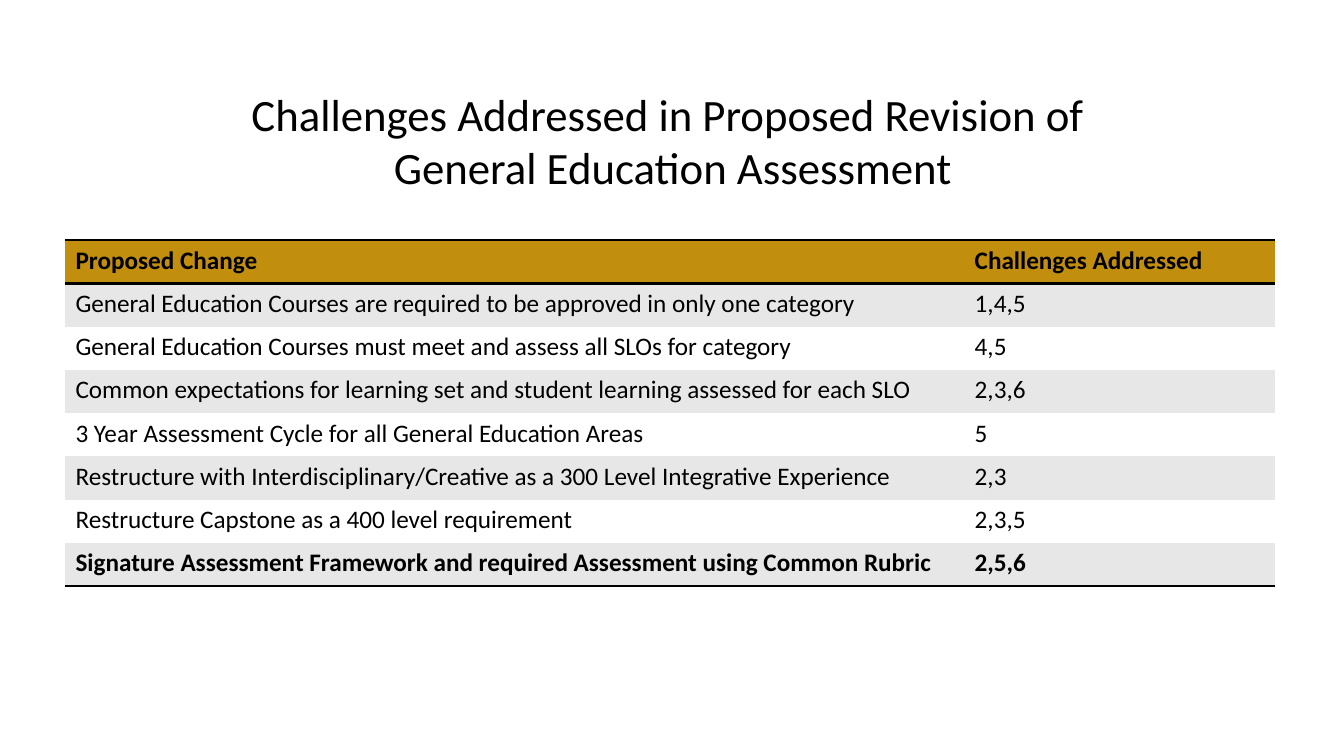
from lxml import etree
from pptx import Presentation
from pptx.dml.color import RGBColor
from pptx.enum.text import MSO_ANCHOR, MSO_AUTO_SIZE, PP_ALIGN
from pptx.oxml.ns import qn
from pptx.util import Cm, Pt

CENTER = PP_ALIGN.CENTER
MIDDLE = MSO_ANCHOR.MIDDLE
NO_AUTOFIT = MSO_AUTO_SIZE.NONE
TITLE_ONLY = 5
NO_STYLE = "{2D5ABB26-0587-4C30-8999-92F81FD0307C}"
FONT = "Calibri"
COLORS = {"text": "000000", "header": "C28E0E", "band": "E7E7E7", "plain": "FFFFFF"}

TITLE = ["Challenges Addressed in Proposed Revision of ", "General Education Assessment"]
ROWS = [
    ("Proposed Change", "Challenges Addressed"),
    ("General Education Courses are required to be approved in only one category", "1,4,5"),
    ("General Education Courses must meet and assess all SLOs for category", "4,5"),
    ("Common expectations for learning set and student learning assessed for each SLO", "2,3,6"),
    ("3 Year Assessment Cycle for all General Education Areas", "5"),
    ("Restructure with Interdisciplinary/Creative as a 300 Level Integrative Experience", "2,3"),
    ("Restructure Capstone as a 400 level requirement", "2,3,5"),
    ("Signature Assessment Framework and required Assessment using Common Rubric", "2,5,6"),
]
COL_WIDTHS = [22.66, 7.83]
ROW_HEIGHT = 1.09


def add_run(p, text, size, bold=False):
    r = p.add_run()
    r.text = text
    r.font.name = FONT
    r.font.size = Pt(size)
    r.font.bold = bold
    r.font.color.rgb = RGBColor.from_string(COLORS["text"])


def add_border(cell, side):
    tcPr = cell._tc.get_or_add_tcPr()
    ln = etree.SubElement(tcPr, qn(f"a:{side}"), w=str(Pt(2)))
    fill = etree.SubElement(ln, qn("a:solidFill"))
    etree.SubElement(fill, qn("a:srgbClr"), val=COLORS["text"])


prs = Presentation()
prs.slide_width = Cm(33.87)
prs.slide_height = Cm(19.05)
s = prs.slides.add_slide(prs.slide_layouts[TITLE_ONLY])

title = s.shapes.title
title.left, title.top, title.width, title.height = Cm(3.18), Cm(2.03), Cm(27.56), Cm(3)
tf = title.text_frame
tf.word_wrap = True
tf.auto_size = NO_AUTOFIT
tf.vertical_anchor = MIDDLE
for i, line in enumerate(TITLE):
    p = tf.add_paragraph() if i else tf.paragraphs[0]
    p.alignment = CENTER
    add_run(p, line, 32)

table = s.shapes.add_table(
    len(ROWS), len(COL_WIDTHS), Cm(1.65), Cm(6.05),
    Cm(sum(COL_WIDTHS)), Cm(ROW_HEIGHT * len(ROWS))).table
table._tbl.tblPr.find(qn("a:tableStyleId")).text = NO_STYLE
for column, width in zip(table.columns, COL_WIDTHS):
    column.width = Cm(width)

last = len(ROWS) - 1
for i, texts in enumerate(ROWS):
    table.rows[i].height = Cm(ROW_HEIGHT)
    color = "header" if i == 0 else "band" if i % 2 else "plain"
    for j, text in enumerate(texts):
        cell = table.cell(i, j)
        if i == 0:
            add_border(cell, "lnT")
        if i in (0, last):
            add_border(cell, "lnB")
        cell.fill.solid()
        cell.fill.fore_color.rgb = RGBColor.from_string(COLORS[color])
        add_run(cell.text_frame.paragraphs[0], text, 18, bold=i in (0, last))

prs.save("out.pptx")
